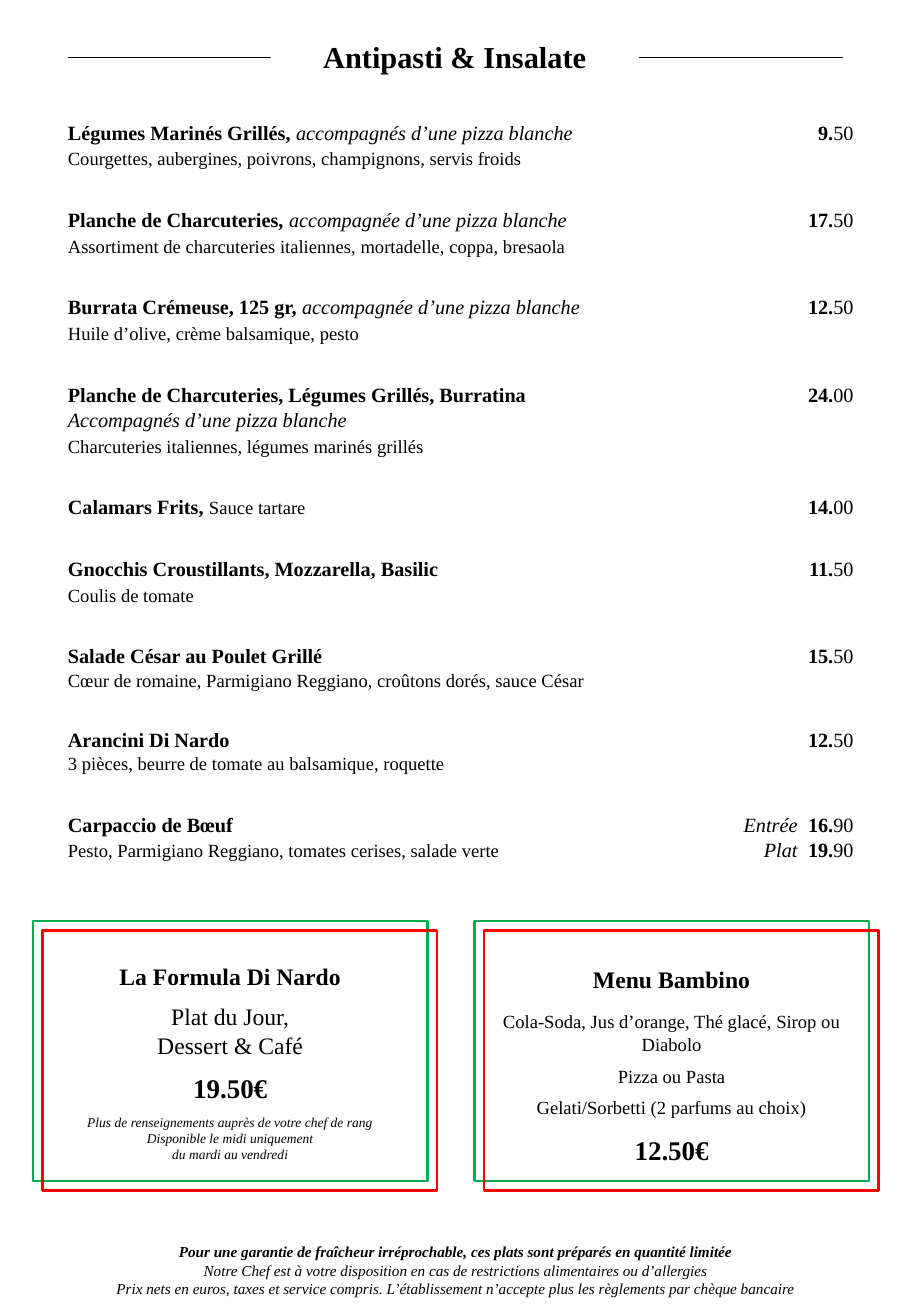
from dataclasses import dataclass
from typing import NamedTuple

from pptx import Presentation
from pptx.dml.color import RGBColor as Rgb
from pptx.enum.shapes import MSO_CONNECTOR as Conn, MSO_SHAPE as Kind
from pptx.enum.text import MSO_ANCHOR as Anchor, PP_ALIGN as Align
from pptx.oxml.ns import qn
from pptx.util import Cm, Pt
from lxml.etree import SubElement as Sub


@dataclass(frozen=True)
class Theme:
    font: str = "Times New Roman"
    ink: Rgb = Rgb(0, 0, 0)
    paper: Rgb = Rgb(255, 255, 255)
    green: Rgb = Rgb(0, 0xB0, 0x50)
    red: Rgb = Rgb(255, 0, 0)
    title: int = 18
    price: int = 16
    head: int = 14
    dish: int = 12
    text: int = 11
    foot: int = 9
    note: int = 8


class Run(NamedTuple):
    text: str
    size: int
    bold: bool = False
    ital: bool = False


class Para(NamedTuple):
    runs: list[Run]
    lead: float  # line height in points
    gap: float = 0  # space before in points
    tabs: tuple[float, ...] = ()  # right tab stops in cm


class Dish(NamedTuple):
    name: str
    price: str
    side: str = ""  # italic, after the name
    extra: str = ""  # italic, on its own line
    desc: str = ""
    plain: str = ""  # upright, after the name
    labels: tuple[str, ...] = ()
    second: str = ""  # price on the last line
    leads: tuple[float, float] = (15, 15)


class Card(NamedTuple):
    left: float
    inset: float
    paras: list[Para]


T = Theme()
STOP, LABEL = 16.43, 15.26
GAP = 21.7

DISHES = [
    Dish("Légumes Marinés Grillés, ", "9.50", "accompagnés d’une pizza blanche",
         desc="Courgettes, aubergines, poivrons, champignons, servis froids"),
    Dish("Planche de Charcuteries, ", "17.50", "accompagnée d’une pizza blanche",
         desc="Assortiment de charcuteries italiennes, mortadelle, coppa, bresaola"),
    Dish("Burrata Crémeuse, 125 gr, ", "12.50", "accompagnée d’une pizza blanche",
         desc="Huile d’olive, crème balsamique, pesto"),
    Dish("Planche de Charcuteries, Légumes Grillés, Burratina", "24.00",
         extra="Accompagnés d’une pizza blanche",
         desc="Charcuteries italiennes, légumes marinés grillés"),
    Dish("Calamars Frits, ", "14.00", plain="Sauce tartare"),
    Dish("Gnocchis Croustillants, Mozzarella, Basilic", "11.50",
         desc="Coulis de tomate"),
    Dish("Salade César au Poulet Grillé", "15.50", leads=(15, 13.6),
         desc="Cœur de romaine, Parmigiano Reggiano, croûtons dorés, sauce César"),
    Dish("Arancini Di Nardo", "12.50", leads=(14.2, 13.6),
         desc="3 pièces, beurre de tomate au balsamique, roquette"),
    Dish("Carpaccio de Bœuf", "16.90", labels=("Entrée", "Plat"), second="19.90",
         desc="Pesto, Parmigiano Reggiano, tomates cerises, salade verte"),
]

CARDS = [
    Card(0.69, 0.84, [
        Para([Run("La Formula Di Nardo", T.head, True)], 17.2),
        Para([Run("Plat du Jour,", T.head)], 17.2, 6.5),
        Para([Run("Dessert & Café", T.head)], 17.2),
        Para([Run("19.50€", T.price, True)], 19, 7.7),
        Para([Run("Plus de renseignements auprès de votre chef de rang",
                  T.note, ital=True)], 9.5, 6),
        Para([Run("Disponible le midi uniquement", T.note, ital=True)], 9.5),
        Para([Run("du mardi au vendredi", T.note, ital=True)], 9.5),
    ]),
    Card(9.92, 0.9, [
        Para([Run("Menu Bambino", T.head, True)], 17.2),
        Para([Run("Cola-Soda, Jus d’orange, Thé glacé, Sirop ou Diabolo",
                  T.text)], 13.6, 9.5),
        Para([Run("Pizza ou Pasta", T.text)], 13.6, 5.3),
        Para([Run("Gelati/Sorbetti (2 parfums au choix)", T.text)], 13.6, 5.3),
        Para([Run("12.50€", T.price, True)], 19, 8.9),
    ]),
]

FOOT = [
    Para([Run("Pour une garantie de fraîcheur irréprochable, ces plats sont "
              "préparés en quantité limitée", T.foot, True, True)], 10.7),
    Para([Run("Notre Chef est à votre disposition en cas de restrictions "
              "alimentaires ou d’allergies", T.foot, ital=True)], 10.7),
    Para([Run("Prix nets en euros, taxes et service compris. L’établissement "
              "n’accepte plus les règlements par chèque bancaire",
              T.foot, ital=True)], 10.7),
]


def write(frame, paras: list[Para], align=Align.CENTER) -> None:
    frame.word_wrap = True
    frame.vertical_anchor = Anchor.TOP
    for i, item in enumerate(paras):
        para = frame.paragraphs[0] if i == 0 else frame.add_paragraph()
        para.alignment = align
        para.line_spacing = Pt(item.lead)
        para.space_before = Pt(item.gap)
        if item.tabs:
            stops = Sub(para._p.get_or_add_pPr(), qn("a:tabLst"))
            for stop in item.tabs:
                Sub(stops, qn("a:tab"), pos=str(Cm(stop)), algn="r")
        for part in item.runs:
            run = para.add_run()
            run.text = part.text
            font = run.font
            font.name, font.size = T.font, Pt(part.size)
            font.bold, font.italic = part.bold, part.ital
            font.color.rgb = T.ink


def cost(price: str, label: str = "") -> tuple[list[Run], tuple[float, ...]]:
    whole, cents = price.split(".")
    runs = [Run(f"\t{label}", T.dish, ital=True)] if label else []
    runs += [Run(f"\t{whole}.", T.dish, True), Run(cents, T.dish)]
    return runs, (LABEL, STOP) if label else (STOP,)


def lines(dish: Dish, gap: float) -> list[Para]:
    first, last = dish.labels or ("", "")
    runs, tabs = cost(dish.price, first)
    head = [Run(dish.name, T.dish, True)]
    if dish.side:
        head.append(Run(dish.side, T.dish, ital=True))
    if dish.plain:
        head.append(Run(dish.plain, T.text))
    paras = [Para(head + runs, dish.leads[0], gap, tabs)]
    if dish.extra:
        paras.append(Para([Run(dish.extra, T.dish, ital=True)], 15))
    if dish.desc:
        runs, tabs = cost(dish.second, last) if dish.second else ([], ())
        paras.append(Para([Run(dish.desc, T.text)] + runs, dish.leads[1], 0, tabs))
    return paras


def rect(shapes, left: float, top: float, wide: float, high: float,
         edge: Rgb | None = None):
    box = shapes.add_shape(Kind.RECTANGLE, Cm(left), Cm(top), Cm(wide), Cm(high))
    box.shadow.inherit = False
    if edge is None:
        box.fill.solid()
        box.fill.fore_color.rgb = T.paper
        box.line.fill.background()
    else:
        box.fill.background()
        box.line.color.rgb, box.line.width = edge, Pt(1.5)
    return box


def main() -> None:
    deck = Presentation()
    deck.slide_width, deck.slide_height = Cm(19.05), Cm(27.51)
    shapes = deck.slides.add_slide(deck.slide_layouts[6]).shapes

    # Dishes and prices
    menu = shapes.add_textbox(Cm(1.42), Cm(2.49), Cm(16.84), Cm(15.52)).text_frame
    menu.margin_left = menu.margin_right = menu.margin_top = menu.margin_bottom = 0
    write(menu, [para for i, dish in enumerate(DISHES)
                 for para in lines(dish, GAP if i else 0)], Align.LEFT)

    # Heading over a rule
    rule = shapes.add_connector(Conn.STRAIGHT, Cm(1.42), Cm(1.2), Cm(17.63), Cm(1.2))
    rule.line.color.rgb, rule.line.width = T.ink, Pt(0.5)
    Sub(rule._element.spPr, qn("a:effectLst"))
    head = rect(shapes, 5.66, 0.67, 7.7, 1.02).text_frame
    write(head, [Para([Run("Antipasti & Insalate", T.title, True)], 21)])
    head.vertical_anchor = Anchor.MIDDLE

    # Set menus in double frames
    for card in CARDS:
        frame = rect(shapes, card.left, 19.25, 8.25, 5.44, T.green).text_frame
        frame.margin_top = Cm(card.inset)
        write(frame, card.paras)
        rect(shapes, card.left + 0.2, 19.45, 8.25, 5.44, T.red)

    # Footer
    foot = shapes.add_textbox(Cm(-0.08), Cm(25.86), Cm(19.2), Cm(1.42))
    write(foot.text_frame, FOOT)

    deck.save("out.pptx")


if __name__ == "__main__":
    main()
